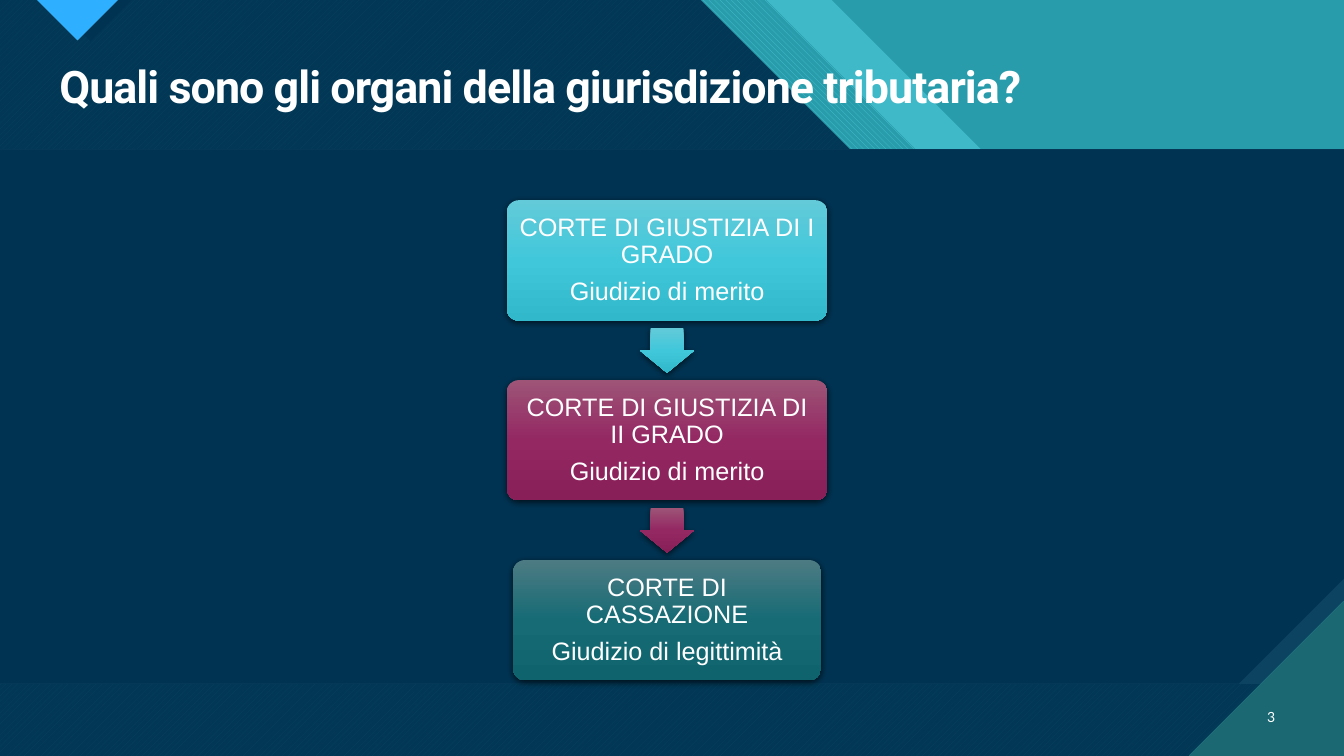
from copy import deepcopy

from lxml.etree import SubElement
from pptx import Presentation
from pptx.dml.color import RGBColor
from pptx.enum.dml import MSO_PATTERN_TYPE as PATTERN
from pptx.enum.shapes import MSO_SHAPE as SHAPE
from pptx.enum.text import MSO_ANCHOR as ANCHOR, PP_ALIGN as ALIGN
from pptx.oxml.ns import qn
from pptx.util import Pt

WIDTH, HEIGHT = 960, 540
COLORS = {
    "navy": "003352", "panel": "0C4360", "teal": "299CAB", "aqua": "47C3D3",
    "pine": "1B6872", "sky": "2FAFFF", "white": "FFFFFF", "black": "000000",
    "first": ("63CAD9", "40C8DA", "31B8CA"),
    "second": ("9D5477", "942863", "881F59"),
    "supreme": ("4D7B83", "166B75", "0F636C"),
}
COURTS = [
    ("first", 229, "CORTE DI GIUSTIZIA DI I GRADO", "Giudizio di merito"),
    ("second", 229, "CORTE DI GIUSTIZIA DI II GRADO", "Giudizio di merito"),
    ("supreme", 220, "CORTE DI CASSAZIONE", "Giudizio di legittimità"),
]


def rgb(name):
    """Return the named colour."""
    return RGBColor.from_string(COLORS[name])


def add_polygon(slide, points, color, back=None, pattern=None, alpha=None):
    """Draw a borderless outline with a solid or patterned fill."""
    points = [(Pt(x), Pt(y)) for x, y in points]
    builder = slide.shapes.build_freeform(*points[0])
    builder.add_line_segments(points[1:], close=True)
    sp = builder.convert_to_shape()
    sp.shadow.inherit = False
    sp.line.fill.background()
    if pattern is None:
        sp.fill.solid()
    else:
        sp.fill.patterned()
        sp.fill.pattern = pattern
        sp.fill.back_color.rgb = rgb(back)
    sp.fill.fore_color.rgb = rgb(color)
    if alpha is not None:
        clr = next(sp._element.spPr.iter(qn("a:srgbClr")))
        SubElement(clr, qn("a:alpha")).set("val", str(alpha * 1000))


def add_text(tf, lines, size=18, font="Arial", bold=False, align=ALIGN.LEFT,
             anchor=ANCHOR.TOP, insets=(7.2, 3.6), leading=1, after=0, tracking=0):
    """Fill a text frame with one formatted paragraph per line."""
    tf.word_wrap = True
    tf.vertical_anchor = anchor
    tf.margin_left = tf.margin_right = Pt(insets[0])
    tf.margin_top = tf.margin_bottom = Pt(insets[1])
    for i, line in enumerate(lines):
        p = tf.add_paragraph() if i else tf.paragraphs[0]
        p.alignment, p.line_spacing = align, leading
        p.space_after = Pt(after if i < len(lines) - 1 else 0)
        r = p.add_run()
        r.text = line
        r.font.size, r.font.name, r.font.bold = Pt(size), font, bold
        r.font.color.rgb = rgb("white")
        if tracking:
            r._r.get_or_add_rPr().set("spc", str(tracking))


def add_glossy(slide, kind, left, top, width, height, shades, adjustments):
    """Draw a preset shape with a vertical gradient and a soft shadow."""
    sp = slide.shapes.add_shape(kind, Pt(left), Pt(top), Pt(width), Pt(height))
    for i, value in enumerate(adjustments):
        sp.adjustments[i] = value
    sp.line.fill.background()
    sp.fill.gradient()
    sp.fill.gradient_angle = 270
    stops = next(sp._element.spPr.iter(qn("a:gsLst")))
    stops.append(deepcopy(stops[0]))
    for stop, shade, position in zip(sp.fill.gradient_stops, shades, (0, 0.5, 1)):
        stop.color.rgb = RGBColor.from_string(shade)
        stop.position = position
    sp.shadow.inherit = False
    effects = sp._element.spPr.find(qn("a:effectLst"))
    shadow = SubElement(effects, qn("a:outerShdw"), blurRad=str(Pt(4.5)),
                        dist=str(Pt(1.5)), dir="5400000", rotWithShape="0")
    clr = SubElement(shadow, qn("a:srgbClr"), val=COLORS["black"])
    SubElement(clr, qn("a:alpha"), val="63000")
    return sp


def add_backdrop(slide, width, height):
    """Draw the diagonal bands, the main panel and the corner triangles."""
    slide.background.fill.solid()
    slide.background.fill.fore_color.rgb = rgb("teal")
    bands = [
        (594, "aqua", None, None, 74),
        (547.2, "aqua", "teal", PATTERN.WIDE_DOWNWARD_DIAGONAL, None),
        (500.4, "aqua", "pine", PATTERN.WIDE_UPWARD_DIAGONAL, None),
        (500.4, "navy", None, None, 90),
    ]
    for edge, color, back, pattern, alpha in bands:
        points = [(0, 0), (edge, 0), (edge + 214, 214), (width, 214),
                  (width, height), (0, height)]
        add_polygon(slide, points, color, back, pattern, alpha)

    add_polygon(slide, [(34.6, 0), (94.3, 0), (64.8, 29.5)], "navy")
    add_polygon(slide, [(26.6, 0), (84.2, 0), (55.4, 28.8)], "sky", "pine",
                PATTERN.DARK_HORIZONTAL)

    top, bottom, snip, corner = 106.7, 488.3, 75.2, 110.9
    add_polygon(slide, [(0, top), (width, top), (width, bottom), (0, bottom)],
                "panel", "pine", PATTERN.DARK_VERTICAL)
    add_polygon(slide, [(0, top), (width, top), (width, bottom - snip),
                        (width - snip, bottom), (0, bottom)], "navy")
    add_polygon(slide, [(width - corner, height), (width, height),
                        (width, height - corner)], "pine", "aqua",
                PATTERN.DARK_HORIZONTAL)


def add_label(slide, left, top, width, height, text, **fmt):
    """Place a text box holding one line."""
    tb = slide.shapes.add_textbox(Pt(left), Pt(top), Pt(width), Pt(height))
    add_text(tb.text_frame, [text], **fmt)


def add_court_flow(slide, left, top, width, height):
    """Stack the courts in the given box with an arrow between each pair."""
    box_h, arrow_w, arrow_h = 86, 39, 32
    step = (height - box_h) / (len(COURTS) - 1)
    center = left + width / 2
    for i, (tone, box_w, court, judgment) in enumerate(COURTS):
        y = top + i * step
        sp = add_glossy(slide, SHAPE.ROUNDED_RECTANGLE, center - box_w / 2, y,
                        box_w, box_h, COLORS[tone], [0.1])
        add_text(sp.text_frame, [court, judgment], align=ALIGN.CENTER,
                 anchor=ANCHOR.MIDDLE, insets=(5, 5), leading=0.9, after=7)
        if i < len(COURTS) - 1:
            gap = (step - box_h - arrow_h) / 2
            add_glossy(slide, SHAPE.DOWN_ARROW, center - arrow_w / 2,
                       y + box_h + gap, arrow_w, arrow_h, COLORS[tone], [0.6, 0.5])


def main():
    """Build and save the slide."""
    prs = Presentation()
    prs.slide_width, prs.slide_height = Pt(WIDTH), Pt(HEIGHT)
    slide = prs.slides.add_slide(prs.slide_layouts[6])
    add_backdrop(slide, WIDTH, HEIGHT)
    add_label(slide, 35.3, 42.5, 882.7, 42.5,
              "Quali sono gli organi della giurisdizione tributaria?",
              size=32, font="Roboto", bold=True, leading=0.9, tracking=-70)
    add_label(slide, 886.3, 497.5, 31.7, 28.8, "3", size=10, font="Lato",
              align=ALIGN.RIGHT, anchor=ANCHOR.MIDDLE)
    add_court_flow(slide, 362, 143, 229, 343)
    prs.save("out.pptx")


if __name__ == "__main__":
    main()
